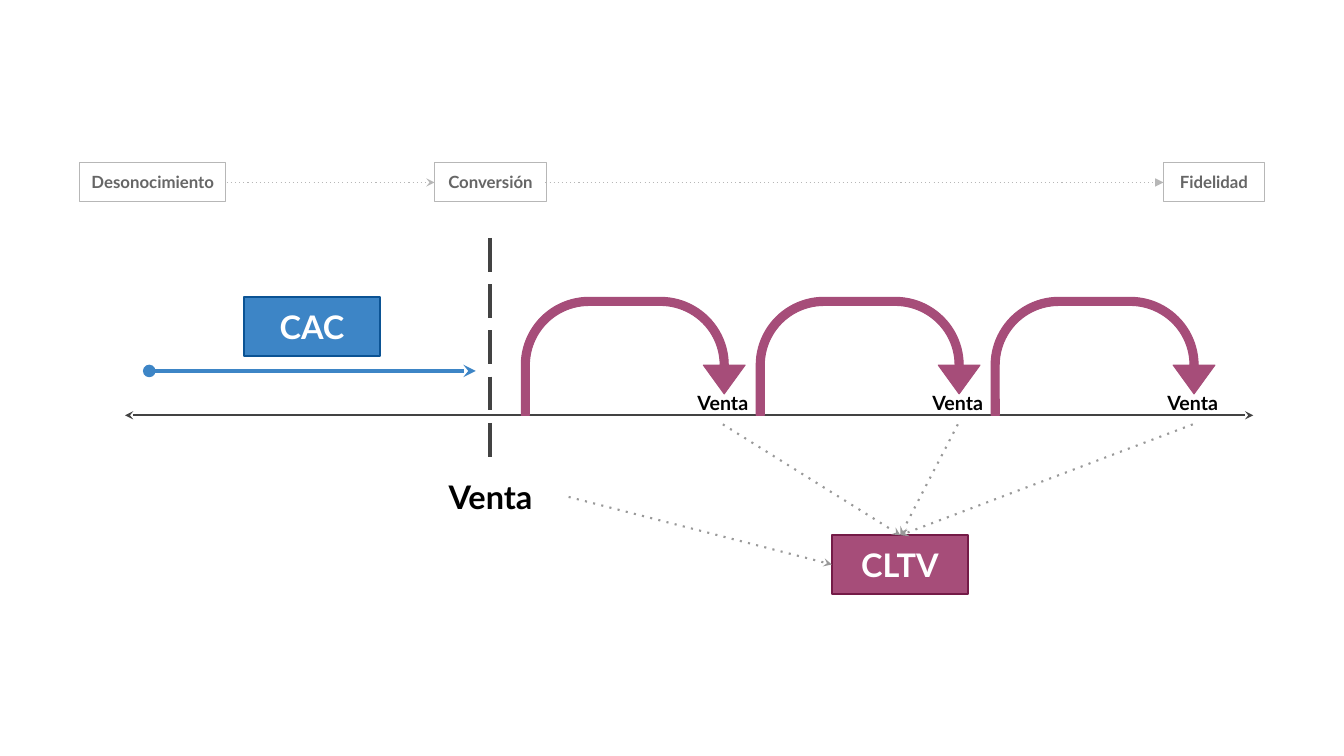
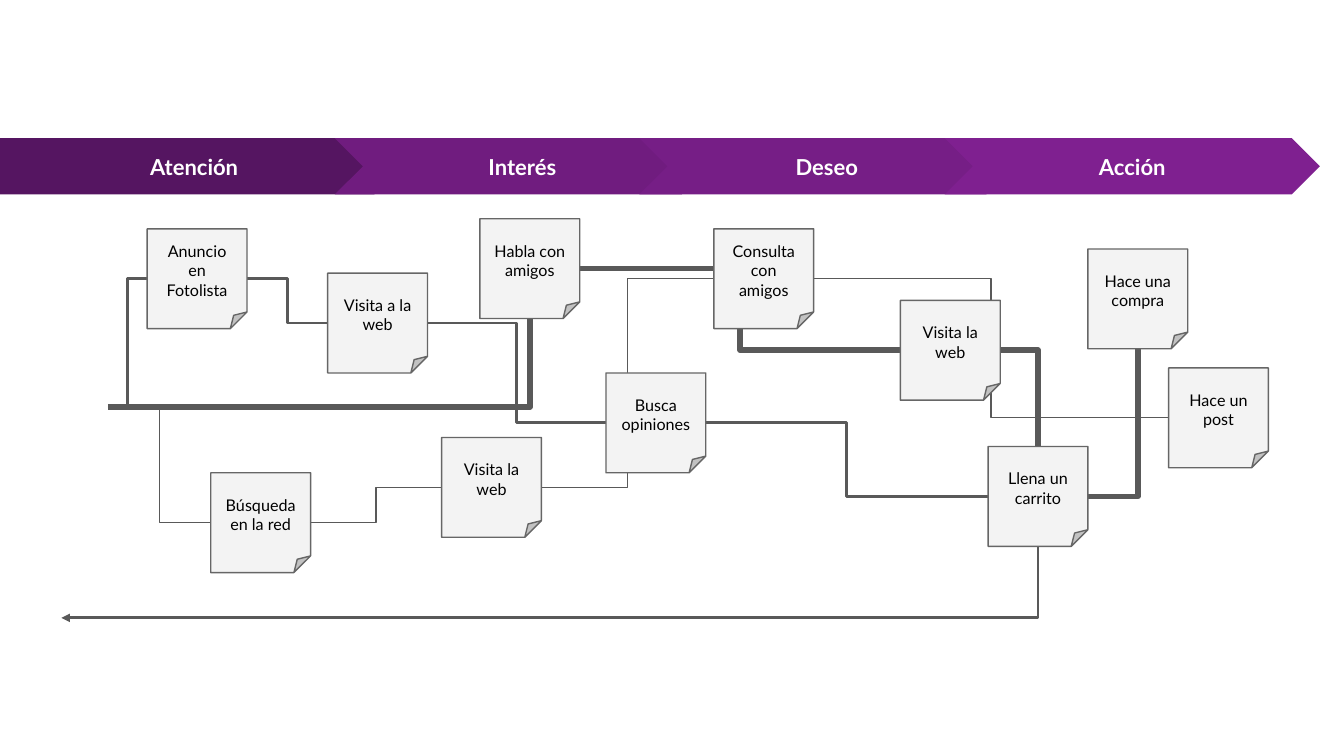
from lxml.etree import SubElement
from pptx import Presentation
from pptx.dml.color import RGBColor
from pptx.enum.shapes import MSO_CONNECTOR, MSO_SHAPE
from pptx.enum.text import MSO_ANCHOR, PP_ALIGN
from pptx.oxml.ns import qn
from pptx.util import Inches, Pt

FONT = "Lato"
COLORS = {
    "black": "000000", "white": "FFFFFF", "axis": "434343",
    "blue": "3D85C6", "dark blue": "0B5394",
    "plum": "A64D79", "dark plum": "741B47",
    "dots": "999999", "frame": "B7B7B7", "frame text": "666666",
    "paper": "F3F3F3", "paper edge": "666666", "route": "595959",
    "attention": "551561", "interest": "701C7F",
    "desire": "761E86", "action": "7F2090",
}


def add_box(page, kind, place, text="", size=12, color="black", fill=None,
            edge=None, width=0.75, bold=True, inset=0.09):
    """Add a preset shape, or a text box when kind is None."""
    place = [Inches(length) for length in place]
    if kind is None:
        box = page.shapes.add_textbox(*place)
    else:
        box = page.shapes.add_shape(kind, *place)
        box.shadow.inherit = False
    if fill:
        box.fill.solid()
        box.fill.fore_color.rgb = RGBColor.from_string(COLORS[fill])
    else:
        box.fill.background()
    if edge:
        box.line.color.rgb = RGBColor.from_string(COLORS[edge])
        box.line.width = Pt(width)
    else:
        box.line.fill.background()
    frame = box.text_frame
    frame.word_wrap = True
    frame.vertical_anchor = MSO_ANCHOR.MIDDLE
    frame.margin_left = frame.margin_right = Inches(inset)
    frame.margin_top = frame.margin_bottom = Inches(inset)
    if text:
        para = frame.paragraphs[0]
        para.text = text
        para.alignment = PP_ALIGN.CENTER
        para.font.name = FONT
        para.font.size = Pt(size)
        para.font.bold = bold
        para.font.color.rgb = RGBColor.from_string(COLORS[color])
    return box


def add_line(page, start, end, color, width, dash=None, head=None, tail=None,
             kind=MSO_CONNECTOR.STRAIGHT):
    """Add a connector; head is the arrowhead at start, tail the one at end."""
    line = page.shapes.add_connector(
        kind, *[Inches(length) for length in (*start, *end)])
    line.line.color.rgb = RGBColor.from_string(COLORS[color])
    line.line.width = Pt(width)
    properties = line._element.spPr
    outline = properties.find(qn("a:ln"))
    if dash:
        SubElement(outline, qn("a:prstDash")).set("val", dash)
    for tag, arrow in (("a:headEnd", head), ("a:tailEnd", tail)):
        if arrow:
            SubElement(outline, qn(tag)).set("type", arrow)
    SubElement(properties, qn("a:effectLst"))
    return line


deck = Presentation()
deck.slide_width = Inches(13.33)
deck.slide_height = Inches(7.5)
blank = deck.slide_layouts[6]

# Acquisition cost and lifetime value
page = deck.slides.add_slide(blank)
add_line(page, (1.24, 4.12), (12.43, 4.12), "axis", 1.5,
         head="stealth", tail="stealth")
add_line(page, (4.86, 2.36), (4.86, 4.61), "axis", 3, dash="lgDash")
add_line(page, (1.48, 3.68), (4.72, 3.68), "blue", 3,
         head="oval", tail="stealth")

repeat_sales = [5.17 + 2.33 * index for index in range(3)]
for left in repeat_sales:
    arrow = add_box(page, MSO_SHAPE.U_TURN_ARROW, (left, 2.95, 2.22, 1.17),
                    fill="plum", edge="plum")
    for index, value in enumerate((0.069, 0.177, 0.244, 0.575, 0.819)):
        arrow.adjustments[index] = value
for left in repeat_sales:
    add_box(page, None, (left + 1.61, 3.78, 0.78, 0.42), "Venta", 14)
add_box(page, None, (4.08, 4.64, 1.57, 0.58), "Venta", 23.2)

for name, left, top, fill, edge in (
        ("CAC", 2.42, 2.95, "blue", "dark blue"),
        ("CLTV", 8.25, 5.31, "plum", "dark plum")):
    add_box(page, MSO_SHAPE.RECTANGLE, (left, top, 1.35, 0.58), name, 23.2,
            "white", fill, edge, 1.5)

add_line(page, (5.64, 4.93), (8.25, 5.6), "dots", 1.5, "dot", tail="stealth")
for left in repeat_sales:
    add_line(page, (left + 2, 4.21), (8.93, 5.31), "dots", 1.5, "dot",
             tail="stealth")

for stage, left, width in (("Desonocimiento", 0.79, 1.45),
                           ("Conversión", 4.31, 1.11),
                           ("Fidelidad", 11.54, 1)):
    add_box(page, MSO_SHAPE.RECTANGLE, (left, 1.61, width, 0.39), stage, 12,
            "frame text", edge="frame")
for start, end, tail in ((2.25, 4.31, "stealth"), (5.41, 11.54, "triangle")):
    add_line(page, (start, 1.81), (end, 1.81), "frame", 0.75, "dot", tail=tail)

# Customer journey
page = deck.slides.add_slide(blank)
for kind, left, width, stage, fill in (
        (MSO_SHAPE.PENTAGON, 0, 3.99, "Atención", "attention"),
        (MSO_SHAPE.CHEVRON, 3.32, 3.72, "Interés", "interest"),
        (MSO_SHAPE.CHEVRON, 6.34, 3.72, "Deseo", "desire"),
        (MSO_SHAPE.CHEVRON, 9.37, 3.72, "Acción", "action")):
    add_box(page, kind, (left, 1.37, width, 0.56), stage, 15.7, "white", fill,
            inset=0.13)

NOTE_SIZE = 0.99
notes = {}
for key, left, top, text in (
        ("ad", 1.46, 2.27, "Anuncio en Fotolista"),
        ("first visit", 3.25, 2.71, "Visita a la web"),
        ("search", 2.09, 4.69, "Búsqueda en la red"),
        ("second visit", 4.38, 4.34, "Visita la web"),
        ("reviews", 6.01, 3.7, "Busca opiniones"),
        ("advice", 7.08, 2.27, "Consulta con amigos"),
        ("last visit", 8.93, 2.98, "Visita la web"),
        ("cart", 9.8, 4.43, "Llena un carrito"),
        ("purchase", 10.79, 2.47, "Hace una compra"),
        ("post", 11.59, 3.65, "Hace un post"),
        ("talk", 4.76, 2.17, "Habla con amigos")):
    notes[key] = add_box(page, MSO_SHAPE.FOLDED_CORNER,
                         (left, top, NOTE_SIZE, NOTE_SIZE), text, 11.5,
                         fill="paper", edge="paper edge", width=1,
                         bold=False, inset=0.13)

# Routes leave sideways; those entering a top or bottom have a single bend
TOP, LEFT, BOTTOM, RIGHT = range(4)
entry, way_out = (1.07, 4.04), (0.61, 6.13)
for source, target, side, width, head in (
        ("second visit", "advice", LEFT, 1, None),
        ("advice", "post", LEFT, 1, None),
        ("talk", "last visit", LEFT, 4, None),
        ("ad", "first visit", LEFT, 2, None),
        ("first visit", "reviews", LEFT, 2, None),
        ("reviews", "cart", LEFT, 2, None),
        (way_out, "cart", BOTTOM, 2, "triangle"),
        ("search", "second visit", LEFT, 1, None),
        ("last visit", "cart", TOP, 4, None),
        ("cart", "purchase", BOTTOM, 4, None),
        (entry, "ad", LEFT, 2, None),
        (entry, "search", LEFT, 1, None),
        (entry, "talk", BOTTOM, 4, None)):
    start = (0, 0) if source in notes else source
    route = add_line(page, start, start, "route", width, head=head,
                     kind=MSO_CONNECTOR.ELBOW)
    if source in notes:
        route.begin_connect(notes[source], RIGHT)
    route.end_connect(notes[target], side)
    if side != LEFT:
        route._element.spPr.find(qn("a:prstGeom")).set("prst", "bentConnector2")
    notes["ad"]._element.addprevious(route._element)

deck.save("out.pptx")
